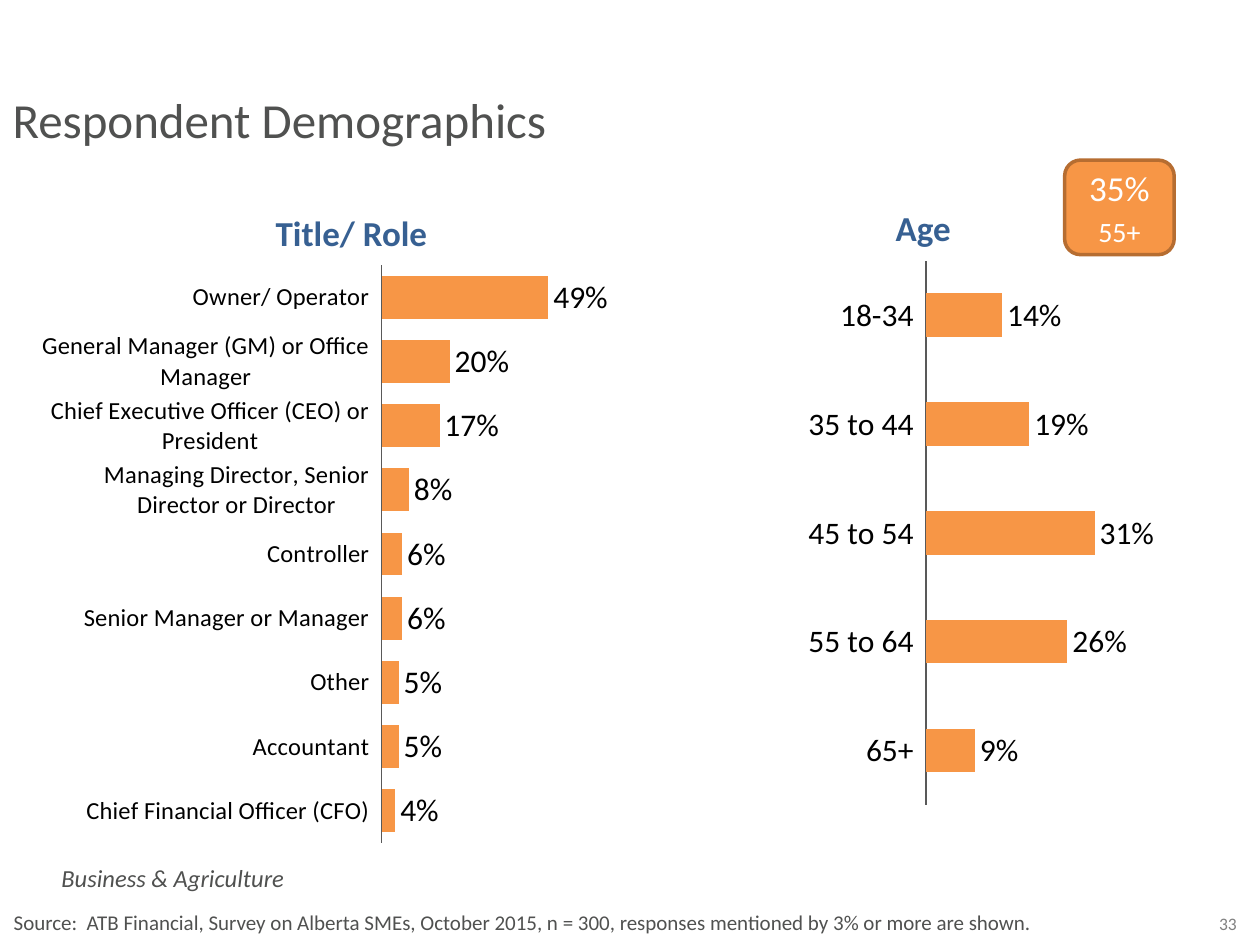
from lxml import etree
from pptx import Presentation
from pptx.chart.data import CategoryChartData
from pptx.dml.color import RGBColor
from pptx.enum.chart import XL_CHART_TYPE, XL_LABEL_POSITION, XL_TICK_LABEL_POSITION, XL_TICK_MARK
from pptx.enum.shapes import MSO_SHAPE
from pptx.enum.text import MSO_ANCHOR, PP_ALIGN
from pptx.oxml.ns import qn
from pptx.util import Pt

COLORS = {"grey": "505150", "number": "808080", "blue": "376092", "orange": "F79646",
          "edge": "B66D31", "axis": "595959", "white": "FFFFFF", "black": "000000"}


def color(name):
    return RGBColor.from_string(COLORS[name])


def format_text(sp, size, name, align=PP_ALIGN.LEFT, bold=False, italic=False):
    sp.text_frame.word_wrap = True
    for p in sp.text_frame.paragraphs:
        p.alignment = align
        for r in p.runs:
            r.font.name = "Calibri"
            r.font.size = Pt(size)
            r.font.bold = bold
            r.font.italic = italic
            r.font.color.rgb = color(name)


prs = Presentation()
prs.slide_width, prs.slide_height = Pt(720), Pt(540)
s = prs.slides.add_slide(prs.slide_layouts[5])

title = s.shapes.title
title.left, title.top, title.width, title.height = Pt(0), Pt(47.5), Pt(420), Pt(41)
title.text_frame.text = "Respondent Demographics"
title.text_frame.vertical_anchor = MSO_ANCHOR.MIDDLE
format_text(title, 28, "grey")

left, center = PP_ALIGN.LEFT, PP_ALIGN.CENTER
texts = [
    ("33", 684, 518.4, 35.3, 19.4, 10, "number", center, False, False),
    ("Business & Agriculture", 28, 489.6, 202, 24.5, 14, "grey", left, False, True),
    ("Source:  ATB Financial, Survey on Alberta SMEs, October 2015, n = 300, "
     "responses mentioned by 3% or more are shown.",
     0.7, 516.2, 719, 21.6, 12, "grey", left, False, False),
    ("Title/ Role", 120.2, 117.4, 161.3, 31.7, 20, "blue", center, True, False),
    ("Age", 447, 114.5, 161.3, 31.7, 20, "blue", center, True, False),
]
for text, x, y, w, h, size, name, align, bold, italic in texts:
    sp = s.shapes.add_textbox(Pt(x), Pt(y), Pt(w), Pt(h))
    sp.text_frame.text = text
    format_text(sp, size, name, align, bold, italic)

roles = [("Owner/ Operator", 0.49), ("General Manager (GM) or Office Manager", 0.2),
         ("Chief Executive Officer (CEO) or President", 0.17),
         ("Managing Director, Senior Director or Director", 0.08), ("Controller", 0.06),
         ("Senior Manager or Manager", 0.06), ("Other", 0.05), ("Accountant", 0.05),
         ("Chief Financial Officer (CFO)", 0.04)]
ages = [("18-34", 0.14), ("35 to 44", 0.19), ("45 to 54", 0.31), ("55 to 64", 0.26), ("65+", 0.09)]
charts = [
    (roles, 20.2, 151.2, 353.5, 344.2, 14, 0.8, 50, 0.56, 0.75),
    (ages, 373.7, 148.3, 311, 324.7, 18, 0.5, 150, 0.5, 1.5),
]
for rows, x, y, w, h, size, top, gap, plot_x, line in charts:
    data = CategoryChartData(number_format="0%")
    data.categories = [label for label, value in rows]
    data.add_series("Series 1", [value for label, value in rows])
    chart = s.shapes.add_chart(XL_CHART_TYPE.BAR_CLUSTERED, Pt(x), Pt(y), Pt(w), Pt(h), data).chart
    chart.has_legend = False
    chart.has_title = False
    chart.font.name = "Calibri"
    chart.font.size = Pt(size)
    chart.font.color.rgb = color("black")

    axis = chart.category_axis
    axis.reverse_order = True
    axis.major_tick_mark = axis.minor_tick_mark = XL_TICK_MARK.NONE
    axis.tick_label_position = XL_TICK_LABEL_POSITION.LOW
    axis.format.line.color.rgb = color("axis")
    axis.format.line.width = Pt(line)
    values = chart.value_axis
    values.minimum_scale, values.maximum_scale = 0, top
    values.has_major_gridlines = False
    values.visible = False

    plot = chart.plots[0]
    plot.gap_width = gap
    plot.vary_by_categories = False
    fill = plot.series[0].format.fill
    fill.solid()
    fill.fore_color.rgb = color("orange")
    plot.has_data_labels = True
    labels = plot.data_labels
    labels.show_value = True
    labels.number_format, labels.number_format_is_linked = "0%", False
    labels.position = XL_LABEL_POSITION.OUTSIDE_END
    labels.font.name = "Calibri"
    labels.font.size = Pt(18)
    labels.font.color.rgb = color("black")

    area = chart.element.find(".//" + qn("c:plotArea"))
    layout = area.find(qn("c:layout"))
    if layout is None:
        layout = etree.Element(qn("c:layout"))
        area.insert(0, layout)
    manual = etree.SubElement(layout, qn("c:manualLayout"))
    for tag, val in [("layoutTarget", "inner"), ("xMode", "edge"), ("yMode", "edge"),
                     ("x", plot_x), ("y", 0), ("w", round(1 - plot_x, 2)), ("h", 0.96)]:
        etree.SubElement(manual, qn("c:" + tag)).set("val", str(val))

badge = s.shapes.add_shape(MSO_SHAPE.ROUNDED_RECTANGLE, Pt(608.4), Pt(91.5), Pt(62.6), Pt(54))
badge.shadow.inherit = False
badge.fill.solid()
badge.fill.fore_color.rgb = color("orange")
badge.line.color.rgb = color("edge")
badge.line.width = Pt(2)
tf = badge.text_frame
tf.text = "35%\n55+"
tf.vertical_anchor = MSO_ANCHOR.MIDDLE
format_text(badge, 20, "white", center)
tf.paragraphs[1].space_before = Pt(3)
tf.paragraphs[1].runs[0].font.size = Pt(16)

prs.save("out.pptx")
